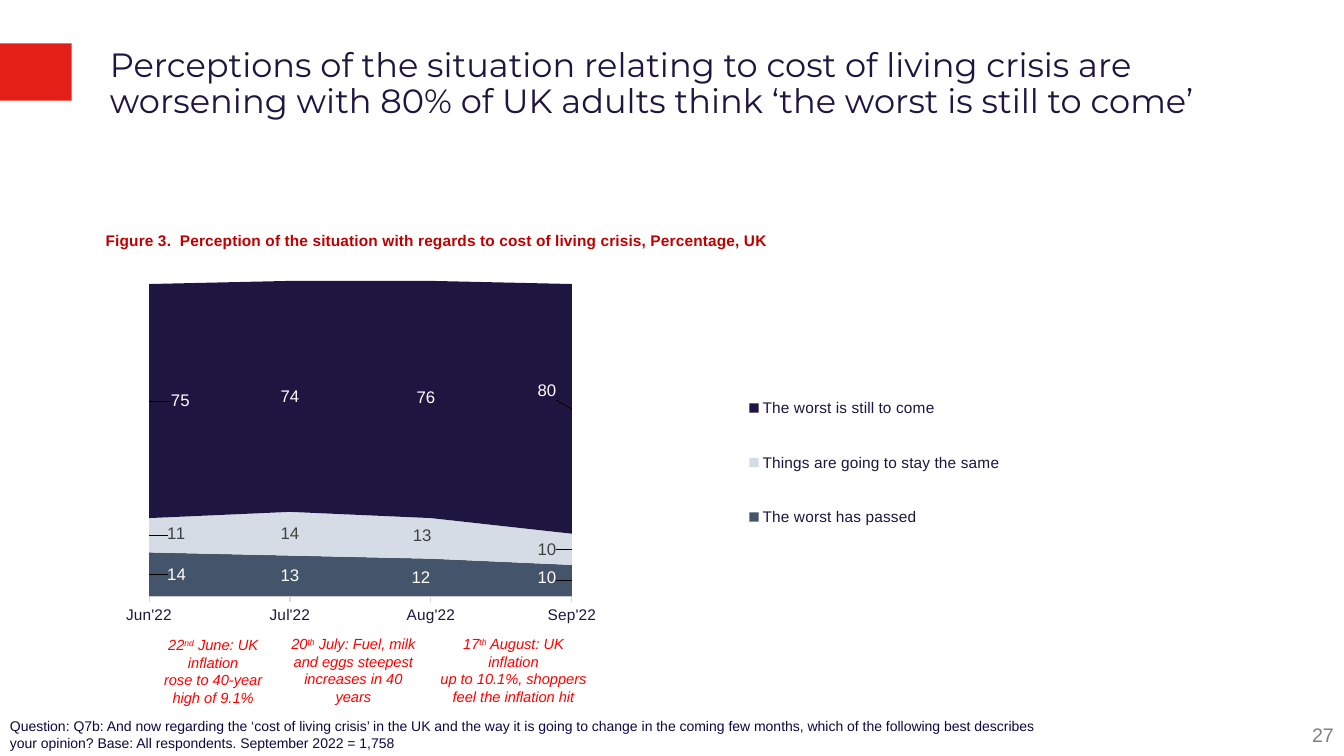
from dataclasses import dataclass

from lxml import etree
from pptx import Presentation
from pptx.chart.data import CategoryChartData
from pptx.dml.color import RGBColor
from pptx.enum.chart import XL_CHART_TYPE, XL_LEGEND_POSITION, XL_TICK_LABEL_POSITION, XL_TICK_MARK
from pptx.enum.shapes import MSO_SHAPE
from pptx.enum.text import MSO_ANCHOR, PP_ALIGN
from pptx.oxml.ns import qn
from pptx.util import Inches, Pt

AREA = XL_CHART_TYPE.AREA_STACKED
LEGEND_RIGHT = XL_LEGEND_POSITION.RIGHT
LABELS_LOW = XL_TICK_LABEL_POSITION.LOW
TICK_OUT, TICK_NONE = XL_TICK_MARK.OUTSIDE, XL_TICK_MARK.NONE
RECT = MSO_SHAPE.RECTANGLE
TOP = MSO_ANCHOR.TOP
LEFT, CENTER, RIGHT = PP_ALIGN.LEFT, PP_ALIGN.CENTER, PP_ALIGN.RIGHT

COLORS = {
    "navy": "1E1541", "slate": "44546A", "mist": "D6DCE5", "white": "FFFFFF",
    "dark_grey": "404040", "grey": "808080", "axis": "D9D9D9", "marker": "E41F18",
    "figure": "C00000", "event": "FF0000", "question": "120742", "black": "000000",
}


@dataclass(frozen=True)
class Box:
    """Place and size in percent of the slide."""
    left: float
    top: float
    width: float
    height: float


@dataclass(frozen=True)
class Event:
    box: Box
    day: str
    suffix: str
    first_line: str
    more_lines: tuple[str, ...]


@dataclass(frozen=True)
class Opinion:
    name: str
    values: tuple[int, ...]
    fill: str
    label_color: str
    shifts: dict[int, tuple[float, float]]  # label offsets, shares of the chart


MONTHS = ("Jun'22", "Jul'22", "Aug'22", "Sep'22")
OPINIONS = (
    Opinion("The worst has passed", (14, 13, 12, 10), "slate", "white",
            {0: (0.022, 0), 2: (-0.008, 0), 3: (-0.02, -0.006)}),
    Opinion("Things are going to stay the same", (11, 14, 13, 10), "mist", "dark_grey",
            {0: (0.022, -0.004), 2: (-0.007, -0.007), 3: (-0.02, 0)}),
    Opinion("The worst is still to come", (75, 74, 76, 80), "navy", "white",
            {0: (0.025, 0), 2: (-0.004, -0.004), 3: (-0.02, -0.041)}),
)
EVENTS = (
    Event(Box(10.95, 83.47, 9.83, 8.53), "22", "nd", " June: UK inflation",
          ("rose to 40-year", "high of 9.1%")),
    Event(Box(20.78, 83.33, 11.03, 10.27), "20", "th", " July: Fuel, milk",
          ("and eggs steepest increases in 40 years",)),
    Event(Box(31.8, 83.33, 12.83, 9.33), "17", "th", " August: UK inflation",
          ("up to 10.1%, shoppers", "feel the inflation hit")),
)

prs = Presentation()
prs.slide_width, prs.slide_height = Inches(13.33), Inches(7.5)
s = prs.slides.add_slide(prs.slide_layouts[5])


def color(name: str) -> RGBColor:
    return RGBColor.from_string(COLORS[name])


def place(box: Box) -> tuple[int, int, int, int]:
    w, h = prs.slide_width / 100, prs.slide_height / 100
    return int(box.left * w), int(box.top * h), int(box.width * w), int(box.height * h)


def style(font, size: float, name: str, face: str = "Arial") -> None:
    font.size, font.name = Pt(size), face
    font.color.rgb = color(name)


def add_text(box: Box, text: str, size: float, name: str, align=LEFT):
    tf = s.shapes.add_textbox(*place(box)).text_frame
    tf.word_wrap = True
    p = tf.paragraphs[0]
    p.text, p.alignment = text, align
    style(p.font, size, name)
    return tf


def add_event(event: Event) -> None:
    tf = add_text(event.box, event.day, 10.5, "event", CENTER)
    p = tf.paragraphs[0]
    suffix = p.add_run()
    suffix.text = event.suffix
    suffix._r.get_or_add_rPr().set("baseline", "30000")
    p.add_run().text = event.first_line
    for line in event.more_lines:
        tf.add_paragraph().text = line
    for p in tf.paragraphs:
        p.alignment = CENTER
        p.font.italic = True
        style(p.font, 10.5, "event")


def set_layout(parent, after: str | None, inner: bool = False, edge: bool = True, **shares: float) -> None:
    """Give a chart part a manual layout, placed behind the child named in after."""
    for old in parent.findall(qn("c:layout")):
        parent.remove(old)
    layout = etree.Element(qn("c:layout"))
    manual = etree.SubElement(layout, qn("c:manualLayout"))
    values = {"layoutTarget": "inner"} if inner else {}
    if edge:
        values |= {"xMode": "edge", "yMode": "edge"}
    for tag, value in (values | shares).items():
        etree.SubElement(manual, qn(f"c:{tag}")).set("val", str(value))
    if after:
        parent.find(qn(after)).addnext(layout)
    else:
        parent.insert(0, layout)


def add_opinion_chart(box: Box) -> None:
    data = CategoryChartData(number_format="0")
    data.categories = MONTHS
    for opinion in OPINIONS:
        data.add_series(opinion.name, opinion.values)
    chart = s.shapes.add_chart(AREA, *place(box), data).chart
    style(chart.font, 10, "black")
    root = chart.element

    # Chart title and legend
    chart.has_title = True
    p = chart.chart_title.text_frame.paragraphs[0]
    p.text = "Figure 3.  Perception of the situation with regards to cost of living crisis, Percentage, UK"
    p.font.bold = True
    style(p.font, 11, "figure")
    set_layout(root.xpath("//c:chart/c:title")[0], "c:tx", x=0.058, y=0.02)
    chart.has_legend = True
    chart.legend.position = LEGEND_RIGHT
    chart.legend.include_in_layout = False
    style(chart.legend.font, 11, "navy")
    set_layout(root.xpath("//c:legend")[0], "c:legendPos", x=0.55, y=0.33, w=0.25, h=0.46)

    # Plot area and axes
    set_layout(root.xpath("//c:plotArea")[0], None, inner=True, x=0.095, y=0.143, w=0.338, h=0.724)
    months, percent = chart.category_axis, chart.value_axis
    months.has_major_gridlines = False
    months.major_tick_mark, months.minor_tick_mark = TICK_OUT, TICK_NONE
    months.tick_label_position = LABELS_LOW
    months.format.line.color.rgb, months.format.line.width = color("axis"), Pt(0.75)
    style(months.tick_labels.font, 11, "navy")
    percent.minimum_scale, percent.maximum_scale = 0, 101
    percent.has_major_gridlines = False
    percent.visible = False
    for cross in root.xpath("//c:valAx/c:crossBetween"):
        cross.set("val", "midCat")

    # Areas and their labels
    for opinion, series, ser in zip(OPINIONS, chart.plots[0].series, root.xpath("//c:ser")):
        series.format.fill.solid()
        series.format.fill.fore_color.rgb = color(opinion.fill)
        labels = series.data_labels
        labels.show_value = True
        labels.number_format, labels.number_format_is_linked = "0", False
        style(labels.font, 12, opinion.label_color)
        for i in opinion.shifts:
            style(series.points[i].data_label.font, 12, opinion.label_color)
        for label, (dx, dy) in zip(ser.xpath("c:dLbls/c:dLbl"), opinion.shifts.values()):
            set_layout(label, "c:idx", edge=False, x=dx, y=dy)


# Red marker and title
marker = s.shapes.add_shape(RECT, *place(Box(0, 5.73, 5.33, 7.6)))
marker.shadow.inherit = False
marker.fill.solid()
marker.fill.fore_color.rgb = color("marker")
marker.line.fill.background()

title = s.shapes.title
title.left, title.top, title.width, title.height = place(Box(7.43, 5.73, 89.55, 7.6))
tf = title.text_frame
tf.word_wrap, tf.vertical_anchor = True, TOP
p = tf.paragraphs[0]
p.text = ("Perceptions of the situation relating to cost of living crisis are "
          "worsening with 80% of UK adults think ‘the worst is still to come’")
p.alignment, p.line_spacing = LEFT, 0.9
style(p.font, 24, "navy", "Montserrat")

# Chart with the events below it
add_opinion_chart(Box(2.25, 28.93, 93.08, 57.6))
for event in EVENTS:
    add_event(event)

# Question and page number
add_text(Box(0, 94.27, 79.28, 4.93),
         "Question: Q7b: And now regarding the ‘cost of living crisis’ in the UK and the way it is "
         "going to change in the coming few months, which of the following best describes your "
         "opinion? Base: All respondents. September 2022 = 1,758", 10, "question")
add_text(Box(78.6, 94.93, 21.38, 4.53), "27", 14, "grey", RIGHT)

prs.save("out.pptx")
